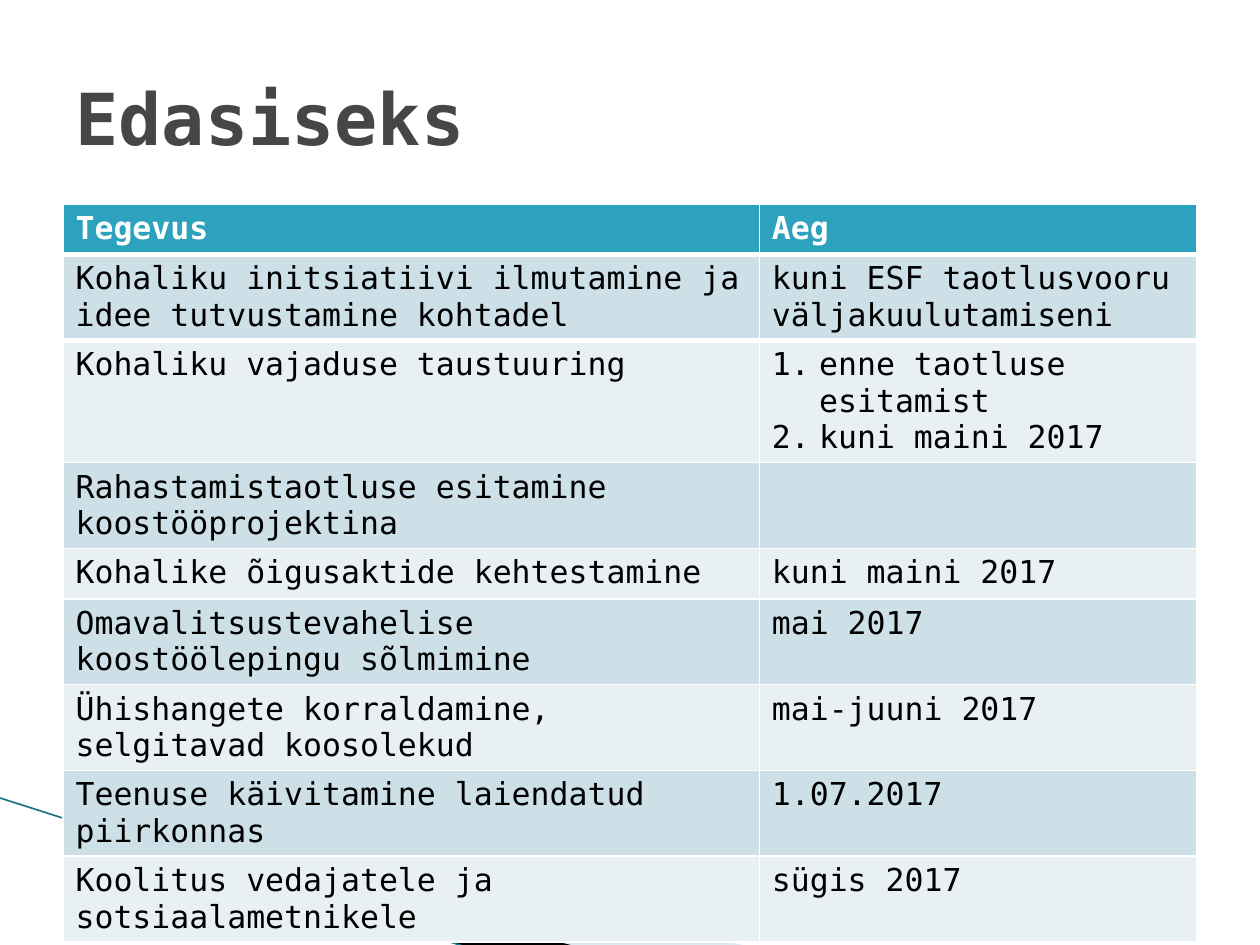
"""Build a slide with a schedule of further activities."""
from dataclasses import dataclass
from typing import Any

from lxml.etree import SubElement
from pptx import Presentation
from pptx.dml.color import RGBColor
from pptx.enum.shapes import MSO_CONNECTOR
from pptx.enum.text import MSO_ANCHOR, MSO_AUTO_SIZE, PP_ALIGN
from pptx.oxml import parse_xml
from pptx.oxml.ns import nsdecls, qn
from pptx.slide import Slide
from pptx.util import Inches, Pt

WIDTH, HEIGHT = Inches(10), Inches(7.5)
MARGIN = 0.05
COLUMN_SHARES = (0.614, 0.386)
ROW_HEIGHT = Inches(0.4)
LIST_INDENT = Inches(0.375)
COLORS = {
    "title": "464646", "header": "2DA2BF", "header_text": "FFFFFF",
    "odd": "CDE0E8", "even": "E8F0F4", "text": "000000", "rule": "FFFFFF",
    "wedge": "A0CBDC", "shade": "000000", "edge": "1B7489",
}
FONT = {"name": "DejaVu Sans Mono"}
TITLE_FONT = FONT | {"size": Pt(41), "bold": True}
HEADER_FONT = FONT | {"size": Pt(18), "bold": True}
BODY_FONT = FONT | {"size": Pt(18), "bold": False}


@dataclass(frozen=True)
class Activity:
    """One table row: an activity and its time, or numbered times."""
    name: str
    times: tuple[str, ...] = ("",)


@dataclass(frozen=True)
class Wedge:
    """A corner decoration: its frame and its points, in inches."""
    color: str
    frame: tuple[float, float, float, float]
    points: tuple[tuple[float, float], ...]
    opacity: int = 100


ACTIVITIES = (
    Activity("Tegevus", ("Aeg",)),
    Activity("Kohaliku initsiatiivi ilmutamine ja idee tutvustamine kohtadel",
             ("kuni ESF taotlusvooru väljakuulutamiseni",)),
    Activity("Kohaliku vajaduse taustuuring",
             ("enne taotluse esitamist", "kuni maini 2017")),
    Activity("Rahastamistaotluse esitamine koostööprojektina"),
    Activity("Kohalike õigusaktide kehtestamine", ("kuni maini 2017",)),
    Activity("Omavalitsustevahelise koostöölepingu sõlmimine", ("mai 2017",)),
    Activity("Ühishangete korraldamine, selgitavad koosolekud", ("mai-juuni 2017",)),
    Activity("Teenuse käivitamine laiendatud piirkonnas", ("1.07.2017",)),
    Activity("Koolitus vedajatele ja sotsiaalametnikele", ("sügis 2017",)),
)
WEDGES = (
    Wedge("wedge", (0.78, 5.47, 4.16, 1.58),
          ((0.55, 6.51), (5.95, 7.51), (4.56, 7.51), (0.55, 6.5)), 40),
    Wedge("shade", (-0.06, 6.33, 4.16, 0.92),
          ((0.53, 6.49), (4.57, 7.51), (3.72, 7.52), (0.54, 6.5))),
)


def format_font(font: Any, values: dict[str, Any], color: str) -> None:
    """Apply format values and a colour to a font."""
    for name, value in values.items():
        setattr(font, name, value)
    font.color.rgb = RGBColor.from_string(COLORS[color])


def set_frame(shape: Any, frame: tuple[float, ...]) -> None:
    """Set the left, top, width and height of a shape in inches."""
    for name, value in zip(("left", "top", "width", "height"), frame):
        setattr(shape, name, Inches(value))


def draw_wedge(slide: Slide, wedge: Wedge) -> None:
    """Draw a filled wedge whose points reach beyond its frame."""
    points = [(Inches(x), Inches(y)) for x, y in wedge.points]
    builder = slide.shapes.build_freeform(*points[0])
    builder.add_line_segments(points[1:], close=True)
    shape = builder.convert_to_shape()
    set_frame(shape, wedge.frame)
    outline = next(shape._element.iter(qn("a:path")))
    outline.set("w", str(shape.width))
    outline.set("h", str(shape.height))
    for node, (x, y) in zip(outline.iter(qn("a:pt")), points):
        node.set("x", str(x - shape.left))
        node.set("y", str(y - shape.top))
    shape.shadow.inherit = False
    shape.fill.solid()
    shape.fill.fore_color.rgb = RGBColor.from_string(COLORS[wedge.color])
    shape.line.fill.background()
    color = shape.fill._xPr.find(".//" + qn("a:srgbClr"))
    SubElement(color, qn("a:alpha"), val=str(wedge.opacity * 1000))


def draw_edge(slide: Slide) -> None:
    """Draw the thin line that runs along the corner decoration."""
    edge = slide.shapes.add_connector(
        MSO_CONNECTOR.STRAIGHT, Inches(-0.01), Inches(6.33), Inches(3.71), Inches(7.52))
    edge.line.width = Pt(0.95)
    edge.line.color.rgb = RGBColor.from_string(COLORS["edge"])
    SubElement(edge._element.spPr, qn("a:effectLst"))


def rule_cell(cell: Any, side: str) -> None:
    """Give one side of a cell the heavy rule below the header."""
    cell._tc.get_or_add_tcPr().insert(0, parse_xml(
        f'<a:{side} {nsdecls("a")} w="{Pt(3)}"><a:solidFill>'
        f'<a:srgbClr val="{COLORS["rule"]}"/></a:solidFill></a:{side}>'))


def fill_cell(cell: Any, lines: tuple[str, ...], row: int) -> None:
    """Write lines to a cell, numbered when there are several."""
    fill = "even" if row % 2 == 0 else "odd"
    cell.fill.solid()
    cell.fill.fore_color.rgb = RGBColor.from_string(COLORS[fill if row else "header"])
    if row < 2:
        rule_cell(cell, "lnT" if row else "lnB")
    cell.text = "\n".join(lines)
    for paragraph in cell.text_frame.paragraphs:
        if len(lines) > 1:
            properties = paragraph._p.get_or_add_pPr()
            properties.set("marL", str(LIST_INDENT))
            properties.set("indent", str(-LIST_INDENT))
            SubElement(properties, qn("a:buFont"), typeface="+mj-lt")
            SubElement(properties, qn("a:buAutoNum"), type="arabicPeriod")
        for run in paragraph.runs:
            format_font(run.font, BODY_FONT if row else HEADER_FONT,
                        "text" if row else "header_text")


def draw_schedule(slide: Slide) -> None:
    """Draw the table of activities and times."""
    width = round((1 - 2 * MARGIN) * WIDTH)
    table = slide.shapes.add_table(
        len(ACTIVITIES), len(COLUMN_SHARES), round(MARGIN * WIDTH), Inches(1.62),
        width, ROW_HEIGHT * len(ACTIVITIES)).table
    for column, share in zip(table.columns, COLUMN_SHARES):
        column.width = round(share * width)
    for row, activity in enumerate(ACTIVITIES):
        fill_cell(table.cell(row, 0), (activity.name,), row)
        fill_cell(table.cell(row, 1), activity.times, row)


def write_title(slide: Slide) -> None:
    """Place and format the title placeholder."""
    title = slide.shapes.title
    set_frame(title, (0.5, 0.3, 9, 1.25))
    frame = title.text_frame
    frame.text = "Edasiseks"
    frame.vertical_anchor = MSO_ANCHOR.MIDDLE
    frame.auto_size = MSO_AUTO_SIZE.NONE
    frame.paragraphs[0].alignment = PP_ALIGN.LEFT
    format_font(frame.paragraphs[0].runs[0].font, TITLE_FONT, "title")


def main() -> None:
    """Build and save the presentation."""
    presentation = Presentation()
    presentation.slide_width, presentation.slide_height = WIDTH, HEIGHT
    slide = presentation.slides.add_slide(presentation.slide_layouts[5])
    write_title(slide)
    for wedge in WEDGES:
        draw_wedge(slide, wedge)
    draw_edge(slide)
    draw_schedule(slide)
    presentation.save("out.pptx")


if __name__ == "__main__":
    main()
